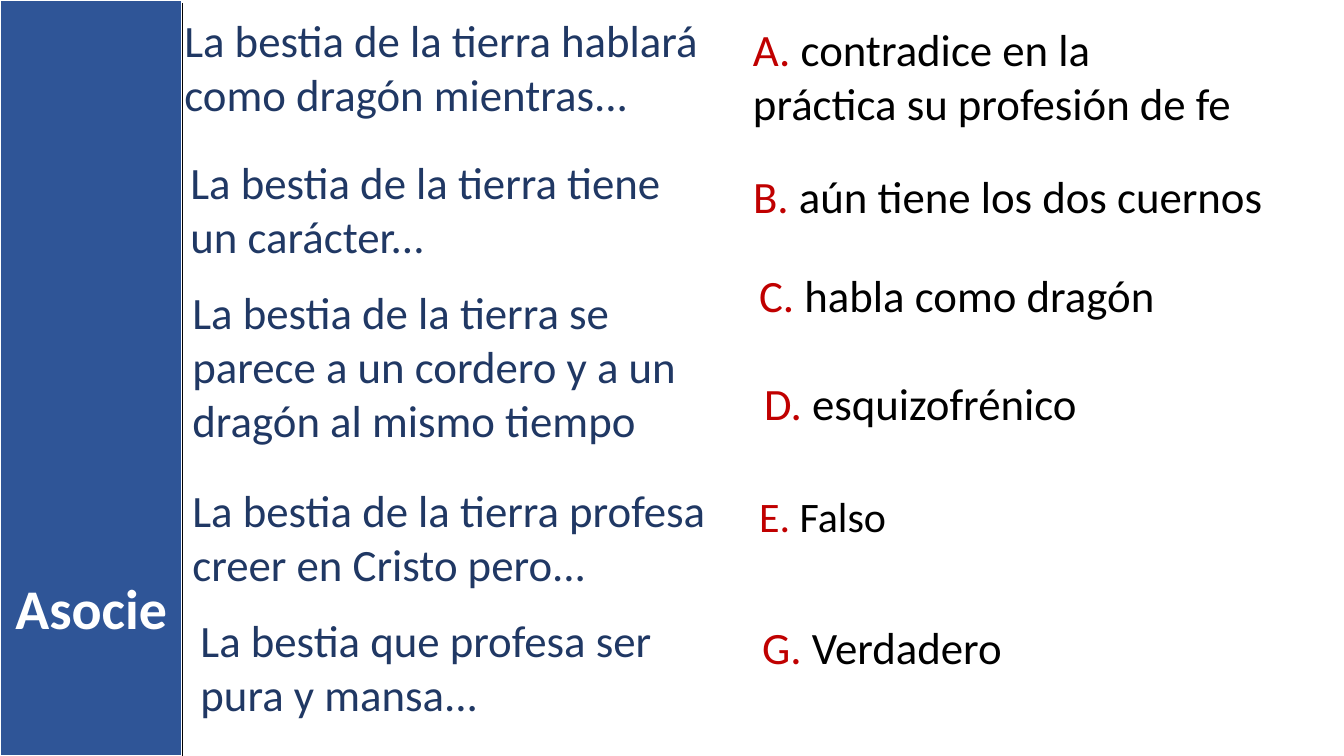
from lxml import etree
from pptx import Presentation
from pptx import util as u
from pptx.dml.color import RGBColor
from pptx.enum import shapes, text
from pptx.oxml.ns import qn

PX = u.Inches(1) // 100
WIDTH, HEIGHT = 1333, 750
BAND_WIDTH = 181

BLUE = RGBColor(0x2F, 0x55, 0x97)
NAVY = RGBColor(0x20, 0x38, 0x64)
RED = RGBColor(0xC0, 0x00, 0x00)
BLACK = RGBColor(0x00, 0x00, 0x00)
WHITE = RGBColor(0xFF, 0xFF, 0xFF)

# left, top, width, height, wording
STATEMENTS = [
    (173, 8, 573, 118, "La bestia de la tierra hablará como dragón mientras..."),
    (179, 149, 494, 118, "La bestia de la tierra tiene un carácter..."),
    (181, 278, 510, 172,
     "La bestia de la tierra se parece a un cordero y a un dragón al mismo tiempo"),
    (181, 474, 535, 118, "La bestia de la tierra profesa creer en Cristo pero..."),
    (189, 603, 477, 118, "La bestia que profesa ser pura y mansa..."),
]

# left, top, width, height, letter, wording, size
ANSWERS = [
    (737, 17, 504, 118, "A", "contradice en la práctica su profesión de fe", 32),
    (737, 162, 529, 64, "B", "aún tiene los dos cuernos", 32),
    (743, 261, 530, 64, "C", "habla como dragón", 32),
    (748, 368, 553, 64, "D", "esquizofrénico", 32),
    (743, 482, 529, 61, "E", "Falso", 30),
    (746, 610, 547, 64, "G", "Verdadero", 32),
]


class SlideBuilder:
    font = "Calibri"

    def __init__(self, slide):
        self.slide = slide

    def band(self, left, top, width, height, fill, line):
        shape = self.slide.shapes.add_shape(
            shapes.MSO_SHAPE.RECTANGLE, left * PX, top * PX, width * PX, height * PX)
        shape.shadow.inherit = False
        shape.fill.solid()
        shape.fill.fore_color.rgb = fill
        shape.line.color.rgb = line
        shape.line.width = u.Pt(1.5)

    def label(self, left, top, width, height, runs, size=32, bold=False,
              align=text.PP_ALIGN.LEFT):
        """Add a wrapping text box; runs is a list of (wording, colour)."""
        shape = self.slide.shapes.add_textbox(
            left * PX, top * PX, width * PX, height * PX)
        frame = shape.text_frame
        frame.word_wrap = True
        frame.auto_size = text.MSO_AUTO_SIZE.SHAPE_TO_FIT_TEXT
        paragraph = frame.paragraphs[0]
        paragraph.alignment = align
        for wording, colour in runs:
            run = paragraph.add_run()
            run.text = wording
            run.font.name = self.font
            run.font.size = u.Pt(size)
            run.font.bold = bold
            run.font.color.rgb = colour

    def line(self, x1, y1, x2, y2, colour):
        connector = self.slide.shapes.add_connector(
            shapes.MSO_CONNECTOR.STRAIGHT, x1 * PX, y1 * PX, x2 * PX, y2 * PX)
        connector.line.color.rgb = colour
        connector.line.width = u.Pt(1)
        etree.SubElement(connector._element.spPr, qn("a:effectLst"))


def main():
    presentation = Presentation()
    presentation.slide_width = WIDTH * PX
    presentation.slide_height = HEIGHT * PX
    builder = SlideBuilder(presentation.slides.add_slide(presentation.slide_layouts[6]))

    builder.band(0, 0, BAND_WIDTH, HEIGHT, BLUE, WHITE)
    for *box, wording in STATEMENTS:
        builder.label(*box, [(wording, NAVY)])
    for *box, letter, wording, size in ANSWERS:
        builder.label(*box, [(f"{letter}. ", RED), (wording, BLACK)], size)
    builder.label(0, 564, BAND_WIDTH, 77, [("Asocie", WHITE)], 40, True,
                  text.PP_ALIGN.CENTER)
    builder.line(BAND_WIDTH, 3, BAND_WIDTH, HEIGHT, BLACK)

    presentation.save("out.pptx")


if __name__ == "__main__":
    main()
